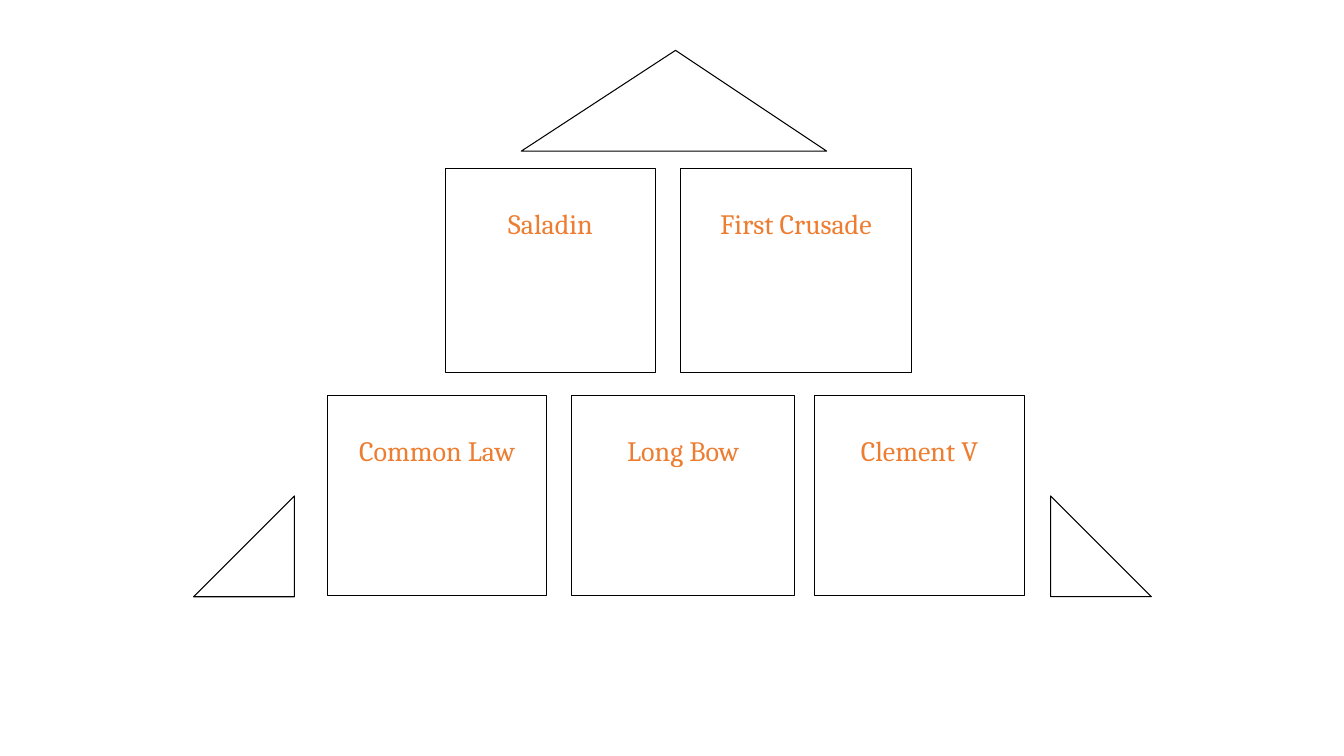
from dataclasses import dataclass

from pptx import Presentation
from pptx.dml.color import RGBColor
from pptx.enum.shapes import MSO_SHAPE
from pptx.enum.text import MSO_ANCHOR, PP_ALIGN
from pptx.shapes.autoshape import Shape
from pptx.slide import Slide
from pptx.util import Inches, Pt


@dataclass(frozen=True)
class Theme:
    fill: RGBColor = RGBColor(0xFF, 0xFF, 0xFF)
    line: RGBColor = RGBColor(0x00, 0x00, 0x00)
    text: RGBColor = RGBColor(0xED, 0x7D, 0x31)
    font: str = "Cambria"
    size: Pt = Pt(20)
    line_width: Pt = Pt(0.75)


@dataclass(frozen=True)
class Box:
    label: str
    left: float
    width: float


@dataclass(frozen=True)
class Row:
    top: float
    height: float
    boxes: tuple[Box, ...]


@dataclass(frozen=True)
class Triangle:
    kind: MSO_SHAPE
    left: float
    top: float
    width: float
    rotation: float = 0
    apex: float | None = None


THEME = Theme()
LABEL_DROP = 0.38  # distance from box top to label
TRIANGLE_HEIGHT = 1

ROWS = (
    Row(1.67, 2.03, (
        Box("Saladin", 4.42, 2.08),
        Box("First Crusade", 6.75, 2.29),
    )),
    Row(3.92, 1.99, (
        Box("Common Law", 3.25, 2.17),
        Box("Long Bow", 5.67, 2.21),
        Box("Clement V", 8.08, 2.08),
    )),
)

TRIANGLES = (
    Triangle(MSO_SHAPE.ISOSCELES_TRIANGLE, 5.17, 0.5, 3.03, apex=0.505),
    Triangle(MSO_SHAPE.RIGHT_TRIANGLE, 1.92, 4.92, 1, rotation=270),
    Triangle(MSO_SHAPE.RIGHT_TRIANGLE, 10.42, 4.92, 1),
)


def add_outline(s: Slide, kind: MSO_SHAPE, left: float, top: float,
                width: float, height: float) -> Shape:
    sp = s.shapes.add_shape(kind, Inches(left), Inches(top),
                            Inches(width), Inches(height))
    sp.shadow.inherit = False
    sp.fill.solid()
    sp.fill.fore_color.rgb = THEME.fill
    sp.line.color.rgb = THEME.line
    sp.line.width = THEME.line_width
    return sp


def add_box(s: Slide, row: Row, box: Box) -> None:
    sp = add_outline(s, MSO_SHAPE.RECTANGLE, box.left, row.top,
                     box.width, row.height)
    tf = sp.text_frame
    tf.word_wrap = True
    tf.vertical_anchor = MSO_ANCHOR.TOP
    tf.margin_top = Inches(LABEL_DROP)
    p = tf.paragraphs[0]
    p.text = box.label
    p.alignment = PP_ALIGN.CENTER
    p.font.name = THEME.font
    p.font.size = THEME.size
    p.font.color.rgb = THEME.text


def add_triangle(s: Slide, tri: Triangle) -> None:
    sp = add_outline(s, tri.kind, tri.left, tri.top,
                     tri.width, TRIANGLE_HEIGHT)
    sp.rotation = tri.rotation
    if tri.apex is not None:
        sp.adjustments[0] = tri.apex


def main() -> None:
    prs = Presentation()
    prs.slide_width = Inches(13.33)
    prs.slide_height = Inches(7.5)
    s = prs.slides.add_slide(prs.slide_layouts[6])

    # Pyramid of labelled boxes
    for row in ROWS:
        for box in row.boxes:
            add_box(s, row, box)

    # Peak and corner triangles
    for tri in TRIANGLES:
        add_triangle(s, tri)

    prs.save("out.pptx")


if __name__ == "__main__":
    main()
